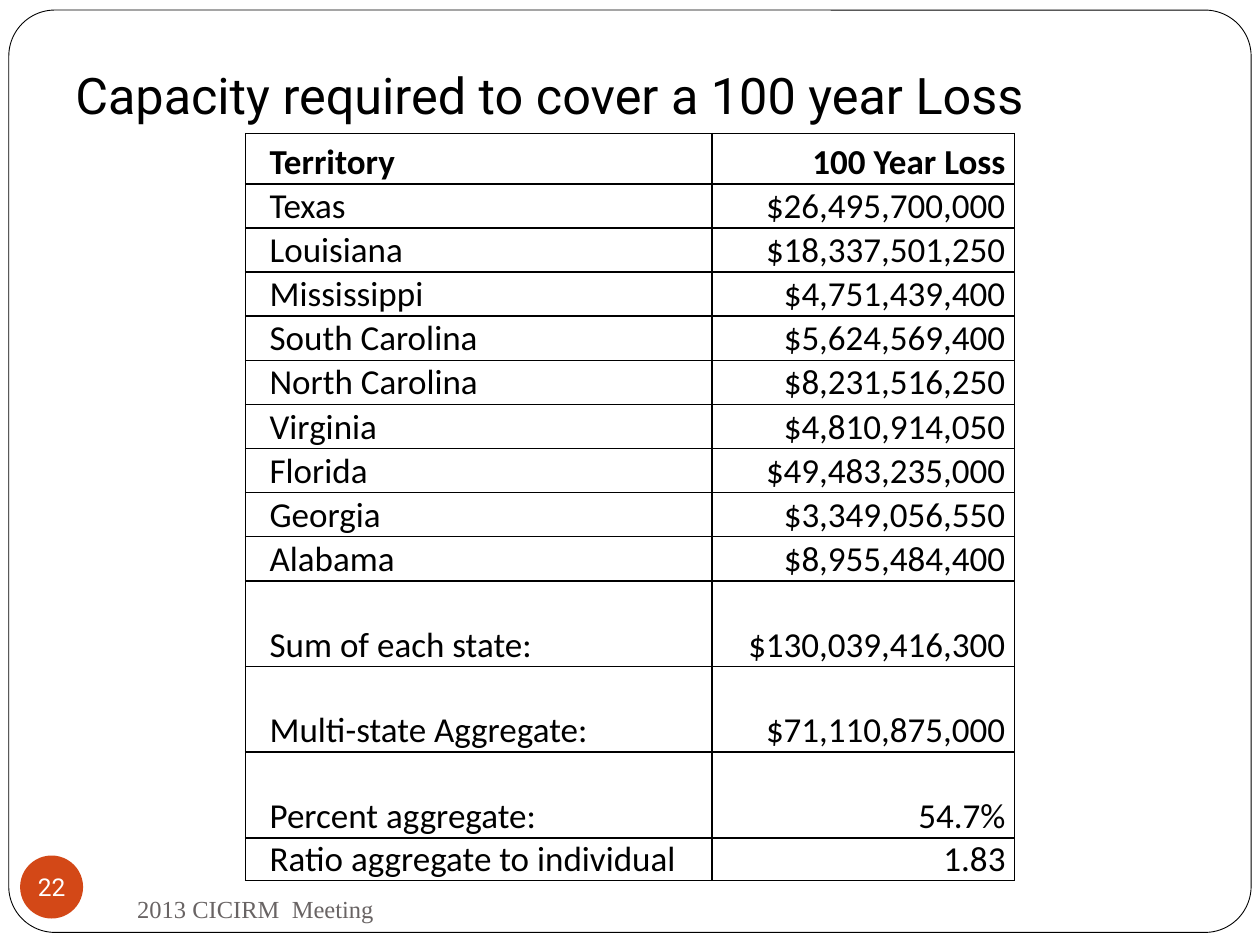
from lxml import etree
from pptx import Presentation
from pptx import util as u
from pptx.dml.color import RGBColor
from pptx.enum import shapes, text
from pptx.oxml import ns

LOSSES = [
    ("Territory", "100 Year Loss"),
    ("Texas", "$26,495,700,000"),
    ("Louisiana", "$18,337,501,250"),
    ("Mississippi", "$4,751,439,400"),
    ("South Carolina", "$5,624,569,400"),
    ("North Carolina", "$8,231,516,250"),
    ("Virginia", "$4,810,914,050"),
    ("Florida", "$49,483,235,000"),
    ("Georgia", "$3,349,056,550"),
    ("Alabama", "$8,955,484,400"),
    ("Sum of each state:", "$130,039,416,300"),
    ("Multi-state Aggregate:", "$71,110,875,000"),
    ("Percent aggregate:", "54.7%"),
    ("Ratio aggregate to individual", "1.83"),
]
ROW_HEIGHTS = [0.4] + [0.35] * 9 + [0.68] * 3 + [0.34]
LEFT, CENTER, RIGHT = text.PP_ALIGN.LEFT, text.PP_ALIGN.CENTER, text.PP_ALIGN.RIGHT
MIDDLE, BOTTOM = text.MSO_ANCHOR.MIDDLE, text.MSO_ANCHOR.BOTTOM


def rgb(value):
    return RGBColor.from_string(value)


class Deck:
    black, white, gray, orange = "000000", "FFFFFF", "696464", "D34817"
    heading, body, footer = "Roboto", "Calibri", "Times New Roman"

    def __init__(self, prs):
        self.s = prs.slides.add_slide(prs.slide_layouts[6])

    def set_text(self, tf, words, size, font, color, align=LEFT, bold=False):
        tf.text = words
        p = tf.paragraphs[0]
        p.alignment = align
        r = p.runs[0]
        r.font.size, r.font.name, r.font.bold = u.Pt(size), font, bold
        r.font.color.rgb = rgb(color)

    def shape(self, kind, box, fill, line=None):
        sp = self.s.shapes.add_shape(kind, *map(u.Inches, box))
        sp.shadow.inherit = False
        sp.fill.solid()
        sp.fill.fore_color.rgb = rgb(fill)
        if line:
            sp.line.color.rgb = rgb(line)
            sp.line.width = u.Pt(0.5)
        else:
            sp.line.fill.background()
        return sp

    def textbox(self, words, box, size, font, color, anchor):
        tf = self.s.shapes.add_textbox(*map(u.Inches, box)).text_frame
        tf.word_wrap = True
        tf.vertical_anchor = anchor
        self.set_text(tf, words, size, font, color)
        return tf

    def border(self, cell):
        """Draw a one-point line on all four sides of a cell."""
        props = cell._tc.get_or_add_tcPr()
        for i, side in enumerate(("lnL", "lnR", "lnT", "lnB")):
            ln = etree.Element(ns.qn("a:" + side), w=str(u.Pt(1)))
            fill = etree.SubElement(ln, ns.qn("a:solidFill"))
            etree.SubElement(fill, ns.qn("a:srgbClr"), val=self.black)
            props.insert(i, ln)

    def table(self, rows, heights, widths, left, top):
        frame = self.s.shapes.add_table(
            len(rows), len(widths), u.Inches(left), u.Inches(top),
            u.Inches(sum(widths)), u.Inches(sum(heights)))
        table = frame.table
        table.first_row = table.horz_banding = False
        for column, width in zip(table.columns, widths):
            column.width = u.Inches(width)
        for i, (row, height) in enumerate(zip(rows, heights)):
            table.rows[i].height = u.Inches(height)
            for j, words in enumerate(row):
                cell = table.cell(i, j)
                cell.margin_left, cell.margin_right = u.Inches(0.19), u.Inches(0.07)
                cell.margin_top = cell.margin_bottom = 0
                cell.vertical_anchor = BOTTOM
                cell.fill.solid()
                cell.fill.fore_color.rgb = rgb(self.white)
                self.border(cell)
                self.set_text(cell.text_frame, words, 20, self.body, self.black,
                              RIGHT if j else LEFT, bold=i == 0)

    def badge(self, number, box):
        sp = self.shape(shapes.MSO_SHAPE.OVAL, box, self.orange)
        tf = sp.text_frame
        tf.margin_left = tf.margin_right = tf.margin_top = tf.margin_bottom = 0
        tf.word_wrap = False
        tf.vertical_anchor = MIDDLE
        self.set_text(tf, number, 14, self.heading, self.white, CENTER)


def main():
    prs = Presentation()
    prs.slide_width, prs.slide_height = u.Inches(10), u.Inches(7.5)
    deck = Deck(prs)

    frame = deck.shape(shapes.MSO_SHAPE.ROUNDED_RECTANGLE,
                       (0.07, 0.08, 9.86, 7.32), deck.white, deck.black)
    frame.adjustments[0] = 0.05

    title = deck.textbox("Capacity required to cover a 100 year Loss",
                         (0.5, 0.3, 9, 0.79), 28.8, deck.heading, deck.black, BOTTOM)
    title.margin_bottom = u.Inches(0.1)

    deck.table(LOSSES, ROW_HEIGHTS, (3.7, 2.4), 1.95, 1.06)
    deck.textbox("2013 CICIRM  Meeting", (0.99, 6.96, 4.33, 0.5),
                 14, deck.footer, deck.gray, MIDDLE)
    deck.badge("22", (0.16, 6.79, 0.5, 0.5))
    prs.save("out.pptx")


if __name__ == "__main__":
    main()
